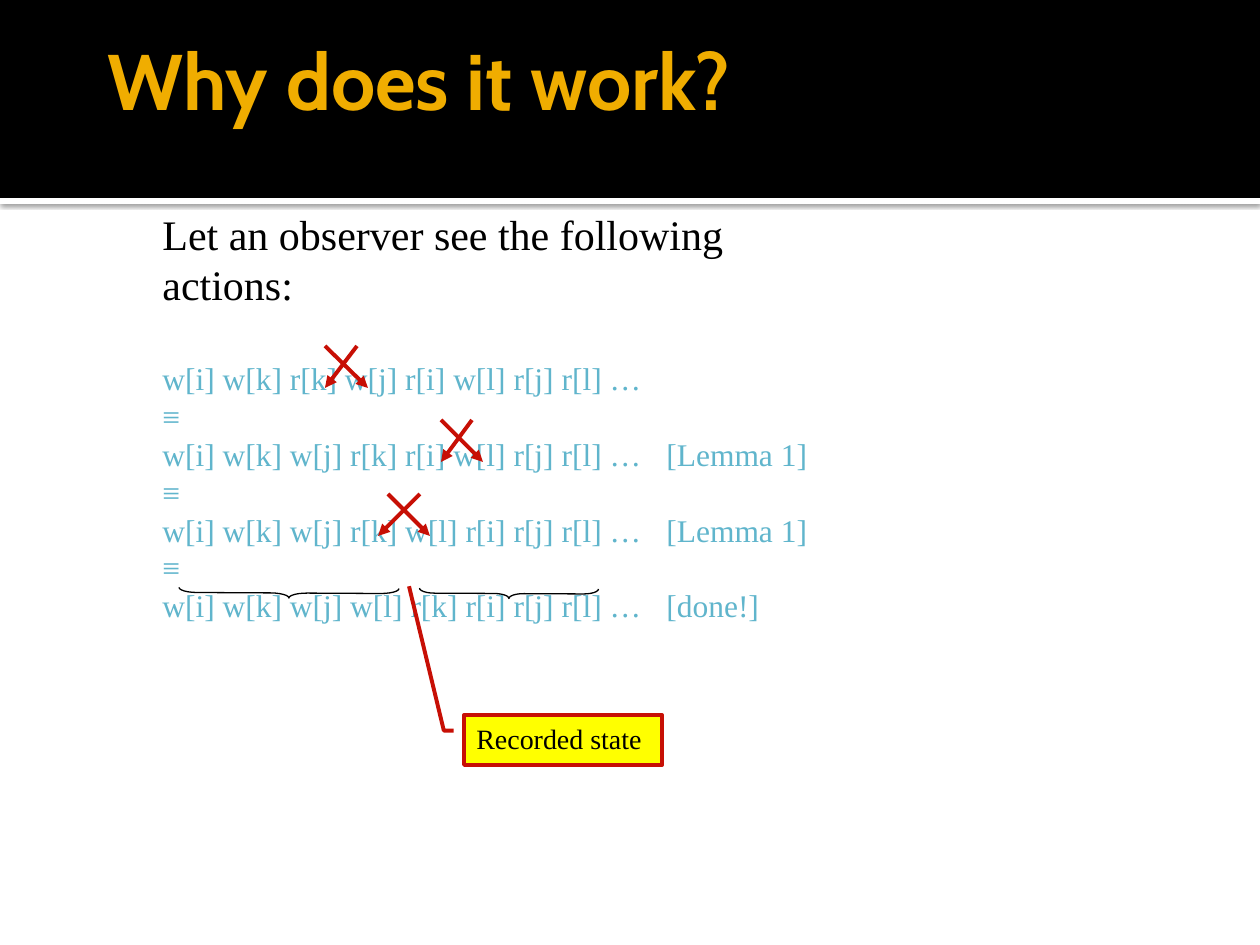
from dataclasses import dataclass

from lxml.etree import SubElement
from pptx import Presentation
from pptx.dml.color import RGBColor
from pptx.enum.shapes import MSO_CONNECTOR, MSO_SHAPE
from pptx.enum.text import MSO_ANCHOR, PP_ALIGN
from pptx.oxml.ns import qn
from pptx.util import Pt

PX = 9144000 / 1260


@dataclass(frozen=True)
class Theme:
    black: str = "000000"
    white: str = "FFFFFF"
    title: str = "F0AD00"
    actions: str = "60B5CC"
    accent: str = "C70F05"
    callout: str = "FFFF00"
    heading_font: str = "Cabin"
    body_font: str = "Times New Roman"
    title_size: int = 45
    intro_size: int = 24
    action_size: int = 18
    callout_size: int = 16
    leading: float = 1.2


THEME = Theme()

TITLE = "Why does it work?"
INTRO = "Let an observer see the following actions:"
STEPS = [
    "w[i] w[k] r[k] w[j] r[i] w[l] r[j] r[l] …",
    "w[i] w[k] w[j] r[k] r[i] w[l] r[j] r[l] …\t[Lemma 1]",
    "w[i] w[k] w[j] r[k] w[l] r[i] r[j] r[l] …\t[Lemma 1]",
    "w[i] w[k] w[j] w[l] r[k] r[i] r[j] r[l] …\t[done!]",
]
EQUIVALENT = "≡"
RECORDED = "Recorded state"

# Each swap: (left, right) at the top, (left, right) at the arrowheads, top y
SWAPS = [
    ((325, 357), (325, 368), 346),
    ((441, 472), (441, 483), 420),
    ((388, 420), (378, 430), 494),
]
SWAP_HEIGHT = 42
# Each brace before its turn: left, top, width, height
BRACES = [(284, 483, 10, 220), (504, 504, 10, 179)]
BRACE_TURN = 270.3
CALLOUT_BEND = (0.313, -0.053, 0.313, -0.102, -2.574, -0.278)


def px(*lengths):
    return [round(length * PX) for length in lengths]


def rgb(color):
    return RGBColor.from_string(color)


def add_run(paragraph, text, size, color, font=THEME.body_font, bold=False):
    run = paragraph.add_run()
    run.text = text
    run.font.size, run.font.name, run.font.bold = Pt(size), font, bold
    run.font.color.rgb = rgb(color)


def add_shape(slide, kind, box, fill=None, line=None, width=0.75, adjust=()):
    shape = slide.shapes.add_shape(kind, *px(*box))
    shape.shadow.inherit = False
    if fill:
        shape.fill.solid()
        shape.fill.fore_color.rgb = rgb(fill)
    else:
        shape.fill.background()
    if line:
        shape.line.color.rgb = rgb(line)
        shape.line.width = Pt(width)
    else:
        shape.line.fill.background()
    for index, value in enumerate(adjust):
        shape.adjustments[index] = value
    return shape


def add_drop_shadow(shape):
    effects = shape._element.spPr.find(qn("a:effectLst"))
    shadow = SubElement(effects, qn("a:outerShdw"), blurRad=str(Pt(2.5)),
                        dist=str(Pt(0.8)), dir="5400000", rotWithShape="0")
    color = SubElement(shadow, qn("a:srgbClr"), val=THEME.black)
    SubElement(color, qn("a:alpha"), val="60000")


def add_arrow(slide, start, end):
    arrow = slide.shapes.add_connector(MSO_CONNECTOR.STRAIGHT, *px(*start, *end))
    arrow.line.color.rgb = rgb(THEME.accent)
    arrow.line.width = Pt(2.25)
    SubElement(arrow.line._get_or_add_ln(), qn("a:tailEnd"), type="triangle")
    SubElement(arrow._element.spPr, qn("a:effectLst"))


def add_header(slide):
    rule = add_shape(slide, MSO_SHAPE.RECTANGLE, (0, 198, 1260, 6), THEME.white)
    add_drop_shadow(rule)
    add_shape(slide, MSO_SHAPE.RECTANGLE, (0, 0, 1260, 198), THEME.black)
    title = slide.shapes.title
    slide.shapes._spTree.append(title._element)  # bring in front of the band
    title.left, title.top, title.width, title.height = px(95, 0, 1071, 158)
    frame = title.text_frame
    frame.vertical_anchor = MSO_ANCHOR.MIDDLE
    frame.margin_left, frame.margin_right = px(13, 6)
    frame.margin_top = frame.margin_bottom = px(6)[0]
    frame.paragraphs[0].alignment = PP_ALIGN.LEFT
    add_run(frame.paragraphs[0], TITLE, THEME.title_size, THEME.title,
            THEME.heading_font, True)


def add_actions(slide):
    frame = slide.shapes.add_textbox(*px(150, 202, 724, 378)).text_frame
    frame.word_wrap = True
    intro = frame.paragraphs[0]
    intro.line_spacing = Pt(THEME.intro_size * THEME.leading)
    intro.space_after = intro.line_spacing
    add_run(intro, INTRO, THEME.intro_size, THEME.black)
    lines = [line for step in STEPS for line in (EQUIVALENT, step)][1:]
    for line in lines:
        paragraph = frame.add_paragraph()
        paragraph.line_spacing = Pt(THEME.action_size * THEME.leading)
        add_run(paragraph, line, THEME.action_size, THEME.actions)


def add_marks(slide):
    for (left, right), (tip_left, tip_right), top in SWAPS:
        bottom = top + SWAP_HEIGHT
        add_arrow(slide, (right, top), (tip_left, bottom))
        add_arrow(slide, (left, top), (tip_right, bottom))
    for box in BRACES:
        curl = box[3] / box[2] / 12
        brace = add_shape(slide, MSO_SHAPE.LEFT_BRACE, box, line=THEME.black,
                          adjust=(curl, 0.5))
        brace.rotation = BRACE_TURN


def add_callout(slide):
    callout = add_shape(slide, MSO_SHAPE.LINE_CALLOUT_2, (464, 715, 198, 50),
                        THEME.callout, THEME.accent, 2.25, CALLOUT_BEND)
    frame = callout.text_frame
    frame.vertical_anchor = MSO_ANCHOR.TOP
    frame.paragraphs[0].alignment = PP_ALIGN.LEFT
    add_run(frame.paragraphs[0], RECORDED, THEME.callout_size, THEME.black)


def main():
    deck = Presentation()
    deck.slide_width, deck.slide_height = px(1260, 945)
    slide = deck.slides.add_slide(deck.slide_layouts[5])
    add_header(slide)
    add_actions(slide)
    add_marks(slide)
    add_callout(slide)
    deck.save("out.pptx")


if __name__ == "__main__":
    main()
